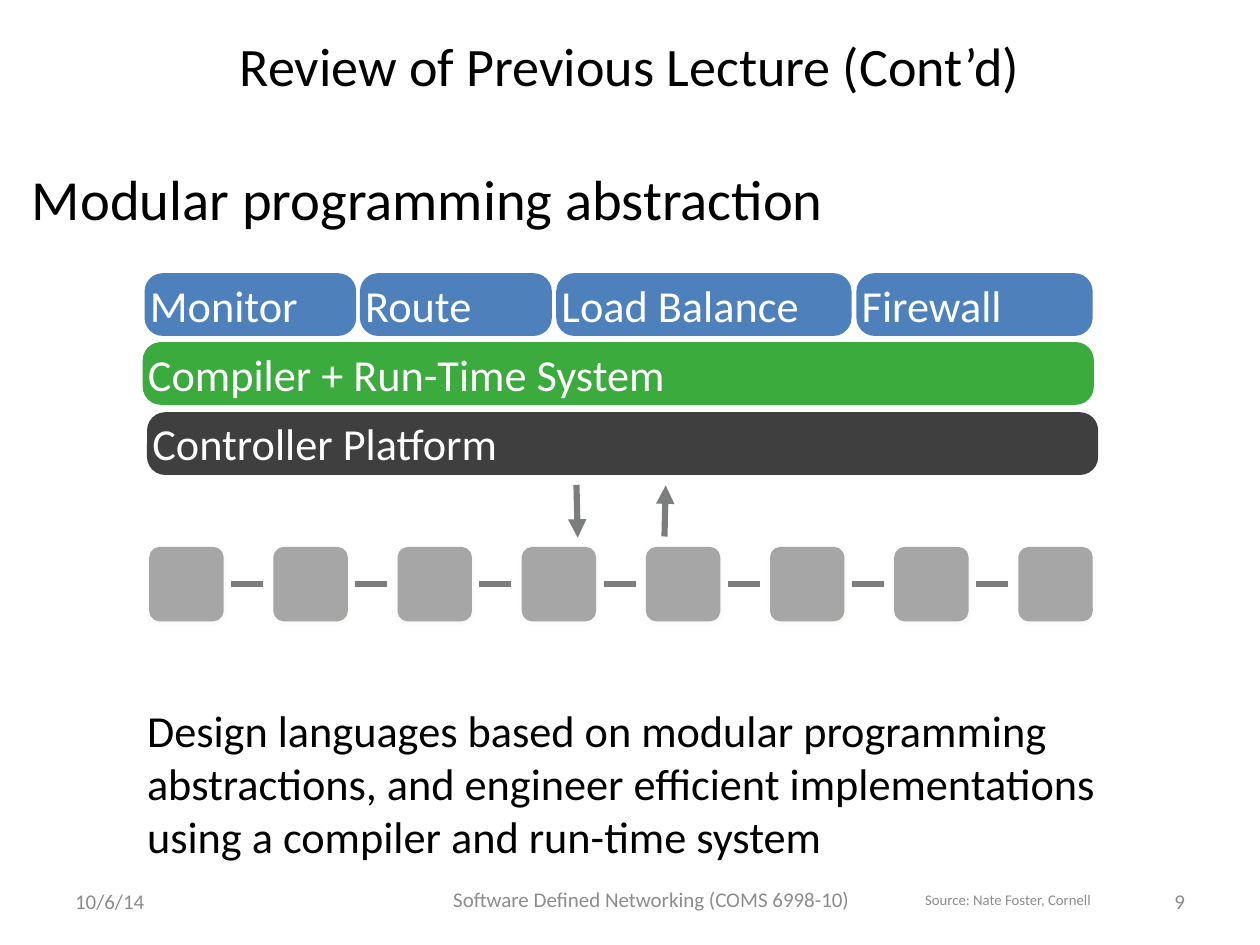
from pptx import Presentation
from pptx.dml.color import RGBColor
from pptx.enum.shapes import MSO_CONNECTOR, MSO_SHAPE
from pptx.enum.text import MSO_ANCHOR, MSO_AUTO_SIZE, PP_ALIGN
from pptx.oxml.ns import qn
from pptx.util import Pt
from lxml.etree import SubElement


def rgb(value):
    return RGBColor.from_string(value)


class LectureSlide:
    FONT = "Calibri"
    BLACK, WHITE, MUTED = "000000", "FFFFFF", "8C8C8C"
    BLUE, GREEN, DARK = "4E81BC", "3BAB3E", "3F3F3F"
    SWITCH, LINK, GLOW = "A6A6A6", "7C7E7E", "EEECE1"
    NO_INSETS = (0, 0)
    INSETS = (10, 5)

    def __init__(self, presentation):
        self.slide = presentation.slides.add_slide(presentation.slide_layouts[5])
        self.shapes = self.slide.shapes

    def set_text(self, shape, text, size=36, color=BLACK, align=PP_ALIGN.LEFT,
                 anchor=MSO_ANCHOR.MIDDLE, insets=NO_INSETS):
        frame = shape.text_frame
        frame.word_wrap = True
        frame.auto_size = MSO_AUTO_SIZE.NONE
        frame.vertical_anchor = anchor
        frame.margin_left = frame.margin_right = Pt(insets[0])
        frame.margin_top = frame.margin_bottom = Pt(insets[1])
        paragraph = frame.paragraphs[0]
        paragraph.alignment = align
        run = paragraph.add_run()
        run.text = text
        run.font.name = self.FONT
        run.font.size = Pt(size)
        run.font.color.rgb = rgb(color)

    def title(self, text, left, top, width, height):
        title = self.shapes.title
        title.left, title.top = Pt(left), Pt(top)
        title.width, title.height = Pt(width), Pt(height)
        self.set_text(title, text, size=44, align=PP_ALIGN.CENTER, insets=self.INSETS)

    def label(self, text, left, top, width, height, **style):
        box = self.shapes.add_textbox(Pt(left), Pt(top), Pt(width), Pt(height))
        self.set_text(box, text, **style)

    def rounded(self, left, top, width, height, fill, corner):
        shape = self.shapes.add_shape(MSO_SHAPE.ROUNDED_RECTANGLE,
                                      Pt(left), Pt(top), Pt(width), Pt(height))
        shape.adjustments[0] = corner
        shape.shadow.inherit = False
        shape.fill.solid()
        shape.fill.fore_color.rgb = rgb(fill)
        shape.line.fill.background()
        return shape

    def layer(self, text, left, top, width, fill, anchor=MSO_ANCHOR.MIDDLE):
        bar = self.rounded(left, top, width, 51, fill, 0.29)
        self.set_text(bar, text, color=self.WHITE, anchor=anchor)

    def switch(self, left, top, side):
        """Draw one network switch with a soft shadow below it."""
        box = self.rounded(left, top, side, side, self.SWITCH, 0.11)
        box.line.color.rgb = rgb(self.SWITCH)
        box.line.width = Pt(5)
        effects = box._element.spPr.find(qn("a:effectLst"))
        shadow = SubElement(effects, qn("a:outerShdw"), blurRad=str(Pt(3)),
                            dist=str(Pt(1.6)), dir="5400000", rotWithShape="0")
        tint = SubElement(shadow, qn("a:srgbClr"), val=self.GLOW)
        SubElement(tint, qn("a:alpha"), val="38000")

    def link(self, start, end, arrow=False):
        line = self.shapes.add_connector(MSO_CONNECTOR.STRAIGHT,
                                         *map(Pt, start), *map(Pt, end))
        line.line.color.rgb = rgb(self.LINK)
        line.line.width = Pt(5)
        properties = line._element.spPr
        if arrow:
            SubElement(properties.find(qn("a:ln")), qn("a:tailEnd"), type="triangle")
        SubElement(properties, qn("a:effectLst"))


def main():
    presentation = Presentation()
    presentation.slide_width, presentation.slide_height = Pt(1024), Pt(768)
    lecture = LectureSlide(presentation)

    lecture.title("Review of Previous Lecture (Cont’d)", 51, 0, 922, 106)
    lecture.label("Modular programming abstraction", 26, 111, 998, 100, size=46)
    lecture.label("Design languages based on modular programming abstractions, "
                  "and engineer efficient implementations using a compiler and "
                  "run-time system", 119.5, 571, 773, 130)

    for module, left, width in (("Monitor", 117.5, 172), ("Route", 292.5, 156),
                                ("Load Balance", 452, 240), ("Firewall", 696, 192)):
        lecture.layer(module, left, 222, width, lecture.BLUE)
    lecture.layer("Compiler + Run-Time System", 116, 278, 773, lecture.GREEN)
    lecture.layer("Controller Platform", 119.5, 335, 773, lecture.DARK,
                  anchor=MSO_ANCHOR.BOTTOM)

    lecture.link((468.5, 394), (469.5, 437), arrow=True)
    lecture.link((540, 436), (541, 394.5), arrow=True)

    switch_count, pitch, side = 8, 100.9, 55.5
    for index in range(switch_count):
        left = 123.8 + index * pitch
        lecture.switch(left, 447, side)
        if index < switch_count - 1:
            lecture.link((left + 64, 474.5), (left + 90, 474.5))

    footer = {"color": lecture.MUTED, "insets": lecture.INSETS}
    lecture.label("10/6/14", 51, 712, 239, 41, size=17, **footer)
    lecture.label("Software Defined Networking (COMS 6998-10)", 350, 708.5, 358.5, 44.5,
                  size=17, align=PP_ALIGN.CENTER, **footer)
    lecture.label("Source: Nate Foster, Cornell", 640, 708.5, 358.5, 44.5,
                  size=12, align=PP_ALIGN.CENTER, **footer)
    lecture.label("9", 734, 712, 239, 41, size=17, align=PP_ALIGN.RIGHT, **footer)

    presentation.save("out.pptx")


if __name__ == "__main__":
    main()
